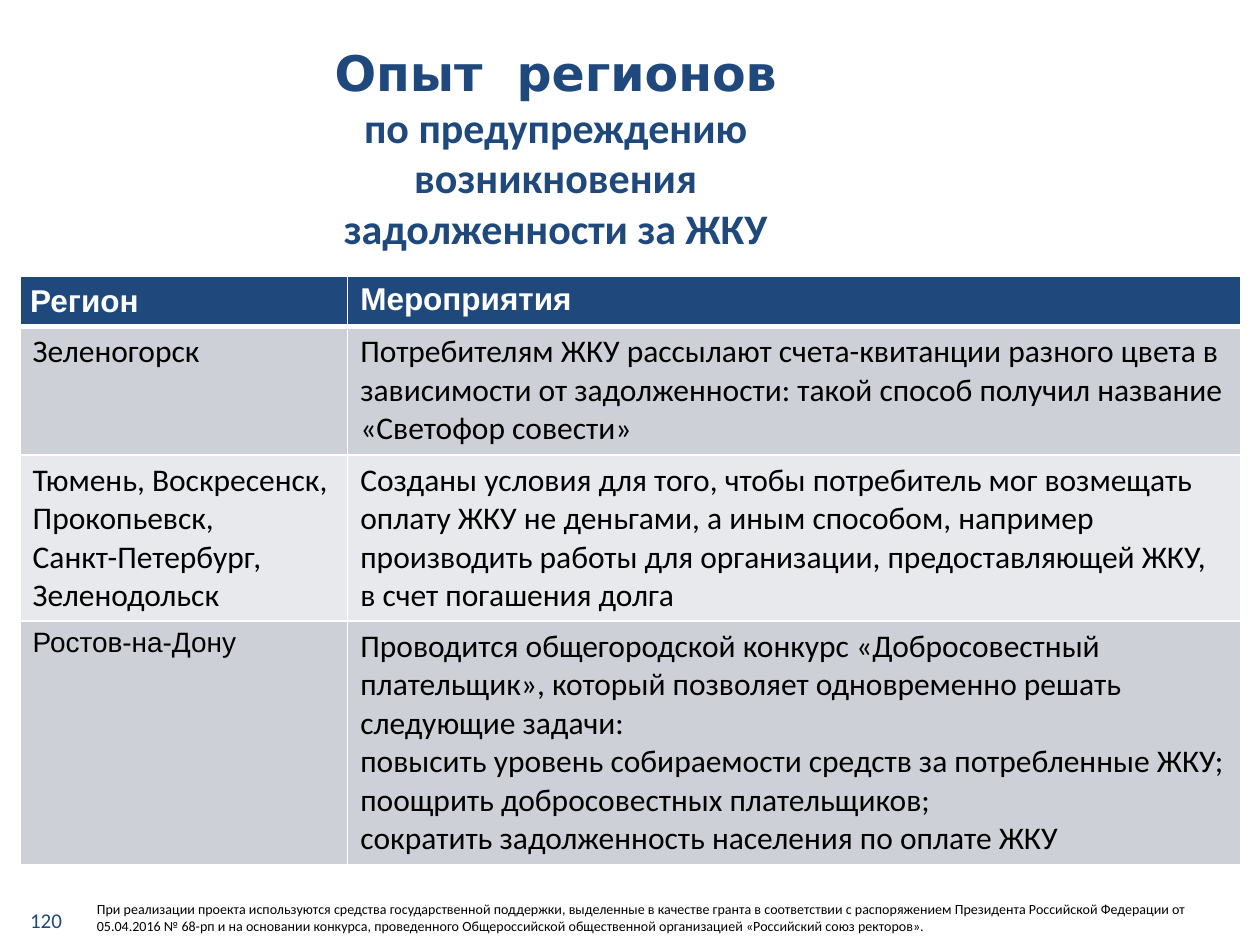
from pptx import Presentation
from pptx.dml.color import RGBColor
from pptx.enum.text import MSO_ANCHOR as Anchor, PP_ALIGN as Align
from pptx.oxml import parse_xml
from pptx.oxml.ns import nsdecls
from pptx.util import Inches, Pt

NAVY = RGBColor(0x1F, 0x49, 0x7D)
WHITE = RGBColor(0xFF, 0xFF, 0xFF)
BLACK = RGBColor(0, 0, 0)
BAND_DARK = RGBColor(0xCD, 0xD0, 0xD7)
BAND_LIGHT = RGBColor(0xE8, 0xE9, 0xEC)

HEADER_FONT = {"name": "Arial", "size": 18, "bold": True, "color": WHITE}
BODY_FONT = {"name": "Calibri", "size": 18, "bold": False, "color": BLACK}
CITY_FONT = BODY_FONT | {"name": "Arial", "size": 16}
TITLE_FONT = {"name": "DejaVu Sans", "size": 28, "bold": True, "color": NAVY}
SUBTITLE_FONT = TITLE_FONT | {"name": "Calibri", "size": 24}
NUMBER_FONT = {"name": "Calibri", "size": 12, "color": NAVY}
NOTE_FONT = {"name": "Calibri", "size": 8, "color": BLACK}

COLUMN_WIDTHS = (2.6, 7.09)
ROW_HEIGHTS = (0.4, 1.02, 1.32, 1.93)
ROW_FILLS = (NAVY, BAND_DARK, BAND_LIGHT, BAND_DARK)
# Each cell is a list of paragraphs
ROWS = (
    (["Регион"], ["Мероприятия"]),
    (["Зеленогорск"],
     ["Потребителям ЖКУ рассылают счета-квитанции разного цвета в зависимости "
      "от задолженности: такой способ получил название «Светофор совести»"]),
    (["Тюмень, Воскресенск,", "Прокопьевск,", "Санкт-Петербург, Зеленодольск"],
     ["Созданы условия для того, чтобы потребитель мог возмещать оплату ЖКУ "
      "не деньгами, а иным способом, например производить работы для "
      "организации, предоставляющей ЖКУ, в счет погашения долга"]),
    (["Ростов-на-Дону"],
     ["Проводится общегородской конкурс «Добросовестный плательщик», который "
      "позволяет одновременно решать следующие задачи:",
      "повысить уровень собираемости средств за потребленные ЖКУ;",
      "поощрить добросовестных плательщиков;",
      "сократить задолженность населения по оплате ЖКУ"]),
)
FOOTNOTE = (
    "При реализации проекта используются средства государственной поддержки, "
    "выделенные в качестве гранта в соответствии c распоряжением Президента "
    "Российской Федерации от 05.04.2016 № 68-рп и на основании конкурса, "
    "проведенного Общероссийской общественной организацией "
    "«Российский союз ректоров»."
)


def set_font(font, values):
    for name, value in values.items():
        if name == "color":
            font.color.rgb = value
        else:
            setattr(font, name, Pt(value) if name == "size" else value)


def add_run(paragraph, text, values):
    run = paragraph.add_run()
    run.text = text
    set_font(run.font, values)


def add_text_box(slide, box, alignment):
    frame = slide.shapes.add_textbox(*map(Inches, box)).text_frame
    frame.word_wrap = True
    frame.vertical_anchor = Anchor.MIDDLE
    paragraph = frame.paragraphs[0]
    paragraph.alignment = alignment
    return paragraph


def set_borders(cell, widths):
    properties = cell._tc.get_or_add_tcPr()
    for index, (side, width) in enumerate(widths.items()):
        line = parse_xml(
            f'<a:ln{side} {nsdecls("a")} w="{Pt(width)}"><a:solidFill>'
            f'<a:srgbClr val="{WHITE}"/></a:solidFill></a:ln{side}>')
        properties.insert(index, line)


def add_title(slide, box):
    paragraph = add_text_box(slide, box, Align.CENTER)
    add_run(paragraph, "Опыт  регионов", TITLE_FONT)
    for line in ("по предупреждению", "возникновения задолженности за ЖКУ"):
        paragraph.add_line_break()
        add_run(paragraph, line, SUBTITLE_FONT)


def add_region_table(slide, box):
    shape = slide.shapes.add_table(len(ROWS), len(COLUMN_WIDTHS), *map(Inches, box))
    table = shape.table
    for column, width in zip(table.columns, COLUMN_WIDTHS):
        column.width = Inches(width)
    for row_index, texts in enumerate(ROWS):
        table.rows[row_index].height = Inches(ROW_HEIGHTS[row_index])
        for column_index, lines in enumerate(texts):
            cell = table.cell(row_index, column_index)
            cell.fill.solid()
            cell.fill.fore_color.rgb = ROW_FILLS[row_index]
            set_borders(cell, {"L": 1, "R": 1,
                               "T": 3 if row_index == 1 else 1,
                               "B": 3 if row_index == 0 else 1})
            values = HEADER_FONT if row_index == 0 else BODY_FONT
            if lines == ["Ростов-на-Дону"]:
                values = CITY_FONT
            for line_index, line in enumerate(lines):
                frame = cell.text_frame
                paragraph = frame.add_paragraph() if line_index else frame.paragraphs[0]
                add_run(paragraph, line, values)

    # The first heading is centred vertically with tighter margins
    heading = table.cell(0, 0)
    heading.vertical_anchor = Anchor.MIDDLE
    heading.margin_left = heading.margin_right = Inches(0.08)
    heading.margin_top = heading.margin_bottom = Inches(0.04)


def add_footer(slide, box):
    left, top, width, height = box
    number_width, note_offset = 0.47, 0.55
    number = add_text_box(slide, (left, top + 0.02, number_width, height), Align.RIGHT)
    add_run(number, "120", NUMBER_FONT)
    note = add_text_box(
        slide, (left + note_offset, top, width - note_offset, height), Align.LEFT)
    add_run(note, FOOTNOTE, NOTE_FONT)


def main():
    presentation = Presentation()
    presentation.slide_width = Inches(10)
    presentation.slide_height = Inches(7.5)
    slide = presentation.slides.add_slide(presentation.slide_layouts[6])
    add_title(slide, (2.42, 0.31, 3.98, 1.72))
    add_region_table(slide, (0.16, 2.19, sum(COLUMN_WIDTHS), sum(ROW_HEIGHTS)))
    add_footer(slide, (0.12, 7.08, 9.76, 0.4))
    presentation.save("out.pptx")


if __name__ == "__main__":
    main()
